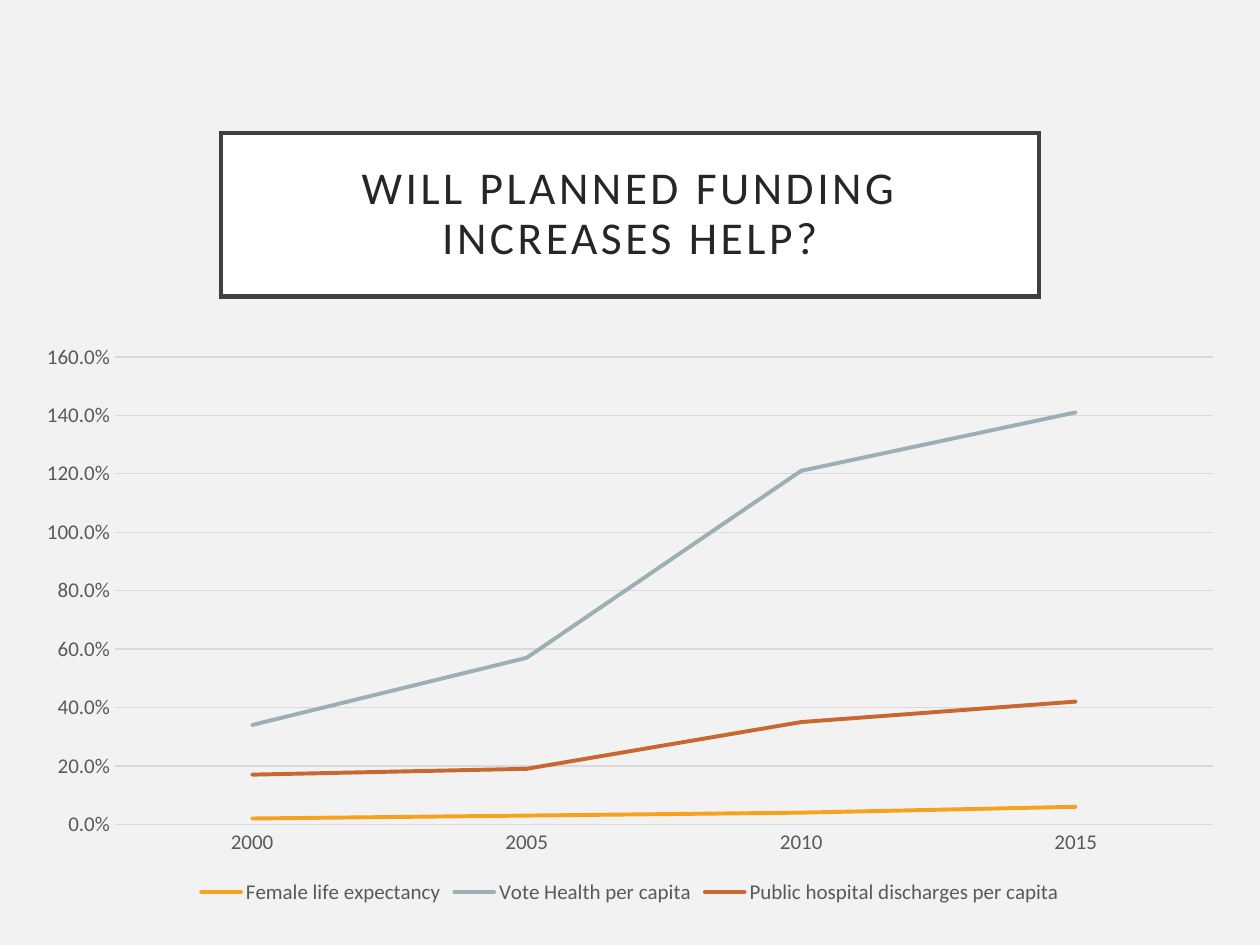
from lxml.etree import SubElement
from pptx import Presentation
from pptx.chart.data import CategoryChartData
from pptx.dml.color import RGBColor
from pptx.enum.chart import XL_CHART_TYPE as Chart, XL_LEGEND_POSITION as Legend
from pptx.enum.chart import XL_MARKER_STYLE as Marker, XL_TICK_MARK as Tick
from pptx.enum.shapes import MSO_SHAPE as Shape
from pptx.enum.text import MSO_ANCHOR as Anchor, PP_ALIGN as Align
from pptx.oxml.ns import qn
from pptx.util import Inches, Pt

BACKGROUND = RGBColor(0xF2, 0xF2, 0xF2)
WHITE = RGBColor(0xFF, 0xFF, 0xFF)
FRAME = RGBColor(0x40, 0x40, 0x40)
INK = RGBColor(0x26, 0x26, 0x26)
LABEL = RGBColor(0x59, 0x59, 0x59)
GRID = RGBColor(0xD9, 0xD9, 0xD9)
ORANGE = RGBColor(0xF6, 0xA2, 0x1D)
STEEL = RGBColor(0x9B, 0xAF, 0xB5)
RUST = RGBColor(0xC9, 0x67, 0x31)

YEARS = ["2000", "2005", "2010", "2015"]
GROWTH = [
    ("Female life expectancy", ORANGE, (0.02, 0.03, 0.04, 0.06)),
    ("Vote Health per capita", STEEL, (0.34, 0.57, 1.21, 1.41)),
    ("Public hospital discharges per capita", RUST, (0.17, 0.19, 0.35, 0.42)),
]


class Deck:
    font = "Calibri"
    columns, rows = 100, 75

    def __init__(self, prs):
        self.prs = prs
        self.s = prs.slides.add_slide(prs.slide_layouts[6])
        fill = self.s.background.fill
        fill.solid()
        fill.fore_color.rgb = BACKGROUND

    def box(self, column, row, width, height):
        dx = self.prs.slide_width / self.columns
        dy = self.prs.slide_height / self.rows
        return [int(v) for v in (column * dx, row * dy, width * dx, height * dy)]

    def style(self, font, size, color):
        font.name, font.size, font.color.rgb = self.font, Pt(size), color

    def stroke(self, line, color, width):
        line.color.rgb, line.width = color, Pt(width)

    def title(self, text, *cells):
        sp = self.s.shapes.add_shape(Shape.RECTANGLE, *self.box(*cells))
        sp.shadow.inherit = False
        sp.fill.solid()
        sp.fill.fore_color.rgb = WHITE
        self.stroke(sp.line, FRAME, 2.5)
        SubElement(sp.line._get_or_add_ln(), qn("a:miter"), lim="800000")
        tf = sp.text_frame
        tf.word_wrap, tf.vertical_anchor = True, Anchor.MIDDLE
        tf.margin_left = tf.margin_right = Inches(0.2)
        tf.margin_top = tf.margin_bottom = Inches(0.2)
        p = tf.paragraphs[0]
        p.alignment, p.line_spacing = Align.CENTER, 0.9
        r = p.add_run()
        r.text = text
        self.style(r.font, 26, INK)
        r.font._element.set("spc", "200")

    def line_chart(self, categories, series, *cells):
        data = CategoryChartData(number_format="0.0%")
        data.categories = categories
        for name, _, values in series:
            data.add_series(name, values)
        frame = self.s.shapes.add_chart(Chart.LINE, *self.box(*cells), data)
        chart = frame.chart
        chart.has_title = False
        self.style(chart.font, 12, LABEL)
        chart.has_legend = True
        chart.legend.position = Legend.BOTTOM
        chart.legend.include_in_layout = False
        self.style(chart.legend.font, 12, LABEL)
        for axis in (chart.category_axis, chart.value_axis):
            axis.major_tick_mark = axis.minor_tick_mark = Tick.NONE
            self.style(axis.tick_labels.font, 12, LABEL)
        self.stroke(chart.category_axis.format.line, GRID, 0.75)
        axis = chart.value_axis
        axis.minimum_scale, axis.maximum_scale, axis.major_unit = 0, 1.6, 0.2
        axis.format.line.fill.background()
        self.stroke(axis.major_gridlines.format.line, GRID, 0.75)
        axis.tick_labels.number_format = "0.0%"
        axis.tick_labels.number_format_is_linked = False
        plot = chart.plots[0]
        plot.vary_by_categories = False
        for line, (_, color, _) in zip(plot.series, series):
            line.smooth = False
            line.marker.style = Marker.NONE
            self.stroke(line.format.line, color, 2.25)
            ln = line.format.line._get_or_add_ln()
            ln.set("cap", "rnd")
            SubElement(ln, qn("a:round"))


def main():
    prs = Presentation()
    prs.slide_width, prs.slide_height = Inches(10), Inches(7.5)
    deck = Deck(prs)
    deck.title("WILL PLANNED FUNDING INCREASES HELP?", 17.55, 10.55, 64.9, 13)
    deck.line_chart(YEARS, GROWTH, 1.8, 26.42, 96.4, 45.8)
    prs.save("out.pptx")


if __name__ == "__main__":
    main()
